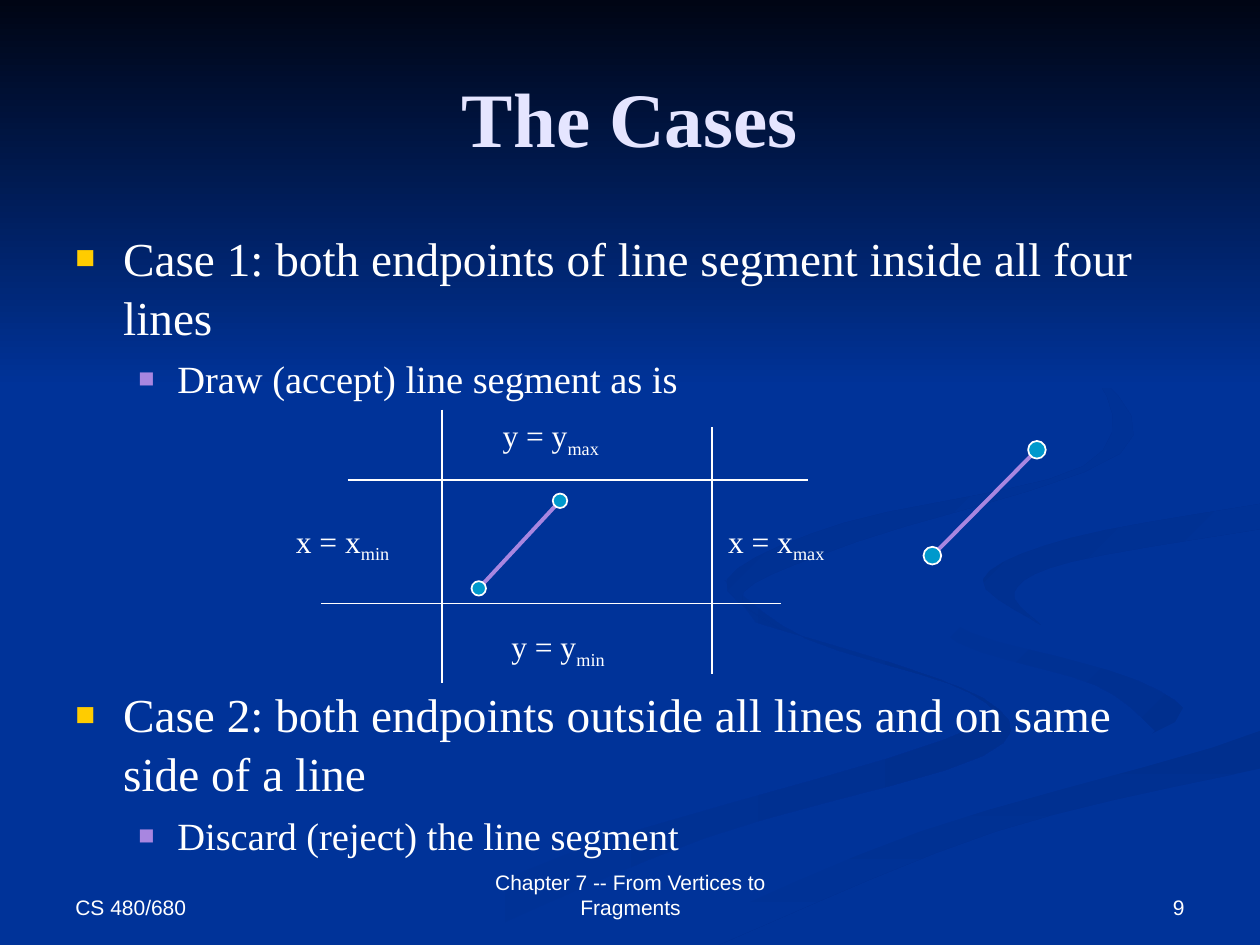
from lxml import etree
from pptx import Presentation
from pptx import util as u
from pptx.dml.color import RGBColor
from pptx.enum import shapes, text
from pptx.oxml.ns import qn

COLORS = {
    "blue": "003399", "night": "000514", "shade": "002F8E",
    "white": "FFFFFF", "title": "E5E5FF", "gold": "FFCC00",
    "violet": "A886E0", "cyan": "0099CC",
}
COLUMNS, ROWS = 100, 75
SERIF, SANS = "Times New Roman", "Arial"

# Ribbons: the two edges in columns and rows, gradient start, end and angle
RIBBONS = [
    ([(57.5, 46), (64, 50.7), (78, 55.4), (78, 60), (56, 66.5), (36, 75)],
     [(30, 75), (46, 67.4), (75, 58.7), (77, 55), (60, 49.4)],
     "blue", "shade", 0),
    ([(72.4, 46.4), (77, 50.2), (89, 53.5), (94.3, 57), (89.4, 60.5)],
     [(91.7, 58), (87, 54.4), (76, 51), (72.4, 46.4)],
     "blue", "shade", 315),
    ([(50, 75), (66, 68), (83, 63), (100, 58)],
     [(100, 61), (79, 66), (57, 75)], "shade", "blue", 270),
    ([(100, 38.7), (77, 42.7), (75, 49), (94, 56), (78, 63), (48, 75)],
     [(52, 75), (73, 66), (100, 58), (100, 54), (78, 46), (100, 40)],
     "blue", "blue", 0),
    ([(82.6, 49.6), (78, 46), (85, 42.7), (100, 40)],
     [(100, 42), (85, 44.6), (80.5, 47), (82.6, 49.6)],
     "shade", "blue", 315),
    ([(76.2, 23.3), (86, 28.7), (88.9, 36), (68, 43), (59, 47), (62, 50)],
     [(62, 50), (57.7, 46), (67, 41.5), (86, 37), (87, 30), (76.2, 23.3)],
     "shade", "blue", 315),
]
NIGHT_SKY = [(0, 0), (COLUMNS, 0), (COLUMNS, 30.8), (0, 30.8)]

# Body text: wording, level, points of space before
POINTS = [
    ("Case 1: both endpoints of line segment inside all four lines", 0, 5.4),
    ("Draw (accept) line segment as is", 1, 5),
    ("Case 2: both endpoints outside all lines and on same side of a line",
     0, 161),
    ("Discard (reject) the line segment", 1, 5),
]
# Per level: size, left indent, hanging indent, bullet colour
LEVELS = [(27, 0.38, 0.38, "gold"), (22, 0.81, 0.31, "violet")]

WINDOW_EDGES = [((27.6, 38.1), (64.1, 38.1)), ((25.5, 47.9), (62, 47.9)),
                ((35.1, 32.5), (35.1, 54.2)), ((56.5, 33.9), (56.5, 53.5))]
EDGE_LABELS = [("x = x", "max", 56.8, 40.9), ("x = x", "min", 22.5, 40.9),
               ("y = y", "max", 38.9, 32.5), ("y = y", "min", 39.6, 49.3)]
# Segments: two endpoints and the dot size
SEGMENTS = [((38, 46.7), (44.45, 39.75), 1.15),
            ((74, 44.1), (82.3, 35.7), 1.4)]
FOOTERS = [("CS 480/680", 5, 23.3, "LEFT"), ("9", 71.7, 23.3, "RIGHT"),
           ("Chapter 7 -- From Vertices to Fragments", 34.2, 31.7, "CENTER")]


def smooth(knots, steps=5):
    """Catmull-Rom curve through the knots."""
    padded = [knots[0], *knots, knots[-1]]
    curve = []
    for a, b, c, d in zip(padded, padded[1:], padded[2:], padded[3:]):
        for t in (step / steps for step in range(steps)):
            curve.append(tuple(
                q + t * ((r - p) + t * ((2 * p - 5 * q + 4 * r - s)
                         + t * (3 * q - p - 3 * r + s))) / 2
                for p, q, r, s in zip(a, b, c, d)))
    return [(min(x, COLUMNS), min(y, ROWS)) for x, y in curve + [knots[-1]]]


def rgb(name):
    return RGBColor.from_string(COLORS[name])


class SlideBuilder:
    def __init__(self, deck):
        self.deck = deck
        self.page = deck.slides.add_slide(deck.slide_layouts[5])
        self.page.background.fill.solid()
        self.page.background.fill.fore_color.rgb = rgb("blue")

    def x(self, columns):
        return u.Emu(round(self.deck.slide_width * columns / COLUMNS))

    def y(self, rows):
        return u.Emu(round(self.deck.slide_height * rows / ROWS))

    def area(self, left, top, width, height):
        return self.x(left), self.y(top), self.x(width), self.y(height)

    def style(self, span, size, color="white", font=SERIF, bold=False):
        span.font.size, span.font.name = u.Pt(size), font
        span.font.color.rgb, span.font.bold = rgb(color), bold

    def outline(self, points, start, end, angle):
        corners = [(self.x(a), self.y(b)) for a, b in points]
        builder = self.page.shapes.build_freeform(*corners[0], scale=1.0)
        builder.add_line_segments(corners[1:], close=True)
        shape = builder.convert_to_shape()
        shape.shadow.inherit = False
        shape.line.fill.background()
        shape.fill.gradient()
        shape.fill.gradient_angle = angle
        for stop, color in zip(shape.fill.gradient_stops, (start, end)):
            stop.color.rgb = rgb(color)

    def ribbon(self, edge, back_edge, *gradient):
        self.outline(smooth(edge) + smooth(back_edge), *gradient)

    def title(self, words, *area):
        box = self.page.shapes.title
        box.left, box.top, box.width, box.height = self.area(*area)
        self.page.shapes.element.append(box.element)  # above the backdrop
        box.text_frame.text = words
        box.text_frame.vertical_anchor = text.MSO_ANCHOR.MIDDLE
        para = box.text_frame.paragraphs[0]
        para.alignment = text.PP_ALIGN.CENTER
        self.style(para.runs[0], 44, "title", bold=True)

    def textbox(self, words, *area, wrap=True):
        frame = self.page.shapes.add_textbox(*self.area(*area)).text_frame
        frame.word_wrap = wrap
        frame.text = words
        return frame

    def bullets(self, points, *area):
        frame = self.textbox("\n".join(point[0] for point in points), *area)
        for para, (_, level, space) in zip(frame.paragraphs, points):
            size, left, hanging, color = LEVELS[level]
            para.level, para.space_before = level, u.Pt(space)
            para.line_spacing = 1.04
            self.style(para.runs[0], size)
            props = para._p.get_or_add_pPr()
            props.set("marL", str(u.Inches(left)))
            props.set("indent", str(-u.Inches(hanging)))
            tint = etree.SubElement(props, qn("a:buClr"))
            etree.SubElement(tint, qn("a:srgbClr"), val=COLORS[color])
            etree.SubElement(props, qn("a:buSzPct"), val="70000")
            etree.SubElement(props, qn("a:buFont"), typeface=SANS)
            etree.SubElement(props, qn("a:buChar"), char="■")

    def label(self, words, subscript, left, top):
        para = self.textbox(words, left, top, 12.7, 5, wrap=False).paragraphs[0]
        para.add_run().text = subscript
        for span in para.runs:
            self.style(span, 18)
        para.runs[1].font._element.set("baseline", "-25000")

    def footer(self, words, left, width, align):
        frame = self.textbox(words, left, 68.3, width, 5.2)
        frame.vertical_anchor = text.MSO_ANCHOR.BOTTOM
        frame.paragraphs[0].alignment = text.PP_ALIGN[align]
        self.style(frame.paragraphs[0].runs[0], 12, font=SANS)

    def line(self, start, end, color="white", weight=1):
        ends = [place(v) for p in (start, end) for place, v in zip((self.x, self.y), p)]
        line = self.page.shapes.add_connector(shapes.MSO_CONNECTOR.STRAIGHT, *ends)
        line.line.color.rgb, line.line.width = rgb(color), u.Pt(weight)
        etree.SubElement(line.element.spPr, qn("a:effectLst"))

    def dot(self, center, size):
        corner = [middle - size / 2 for middle in center]
        dot = self.page.shapes.add_shape(
            shapes.MSO_SHAPE.OVAL, *self.area(*corner, size, size))
        dot.shadow.inherit = False
        dot.fill.solid()
        dot.fill.fore_color.rgb = rgb("cyan")
        dot.line.color.rgb, dot.line.width = rgb("white"), u.Pt(1)

    def segment(self, start, end, dot_size):
        self.line(start, end, "violet", 2.25)
        for center in (end, start):
            self.dot(center, dot_size)


def main():
    deck = Presentation()
    deck.slide_width, deck.slide_height = u.Inches(10), u.Inches(7.5)
    slide = SlideBuilder(deck)
    # Backdrop
    for ribbon in RIBBONS:
        slide.ribbon(*ribbon)
    slide.outline(NIGHT_SKY, "night", "blue", 270)
    # Title, body and footers
    slide.title("The Cases", 5, 3, 90, 12.5)
    slide.bullets(POINTS, 5, 17.5, 90, 49.5)
    for footer in FOOTERS:
        slide.footer(*footer)
    # Clipping window with the two line segments
    for edge in WINDOW_EDGES:
        slide.line(*edge)
    for label in EDGE_LABELS:
        slide.label(*label)
    for segment in SEGMENTS:
        slide.segment(*segment)
    deck.save("out.pptx")


if __name__ == "__main__":
    main()
